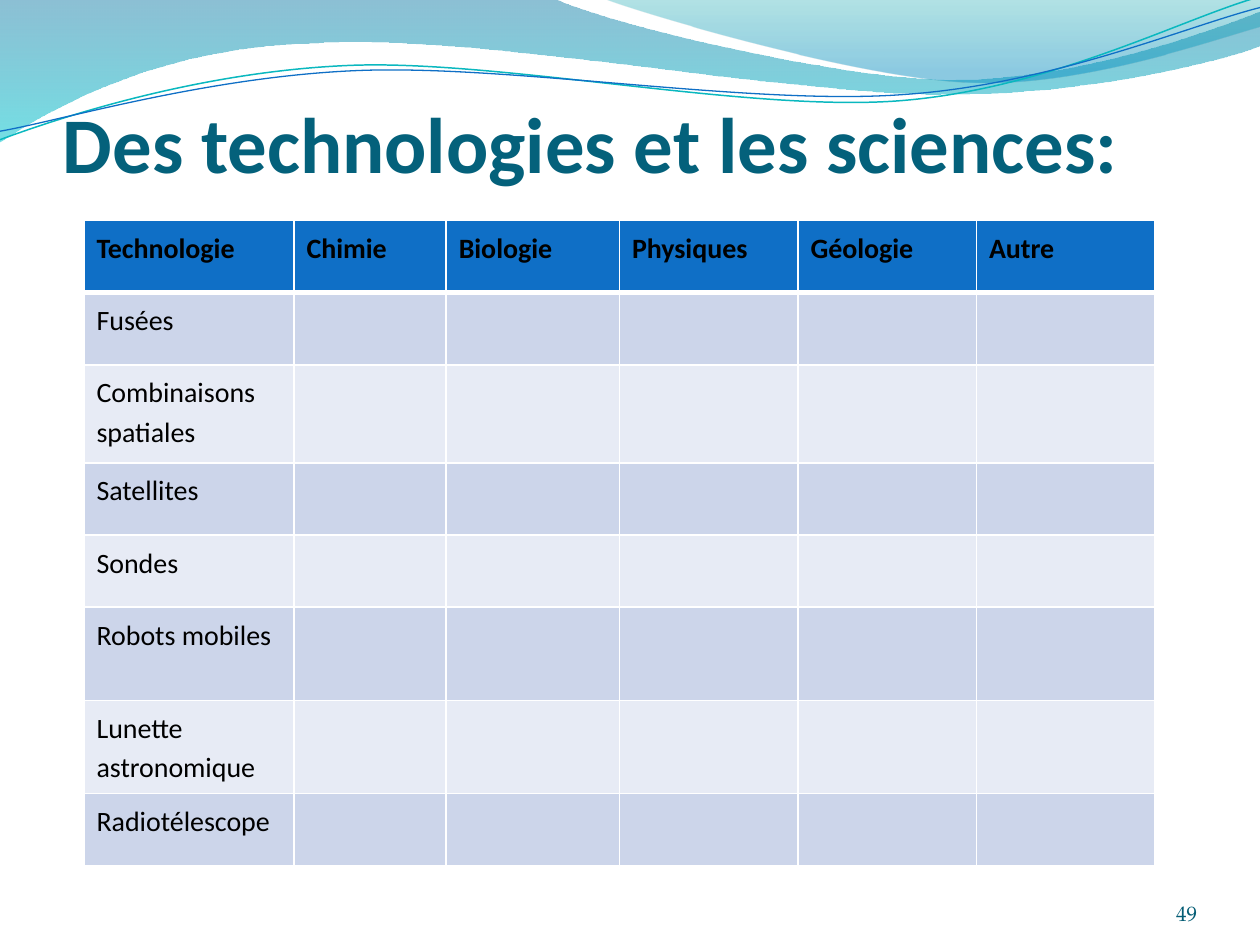
from lxml.etree import SubElement
from pptx import Presentation
from pptx.dml.color import RGBColor
from pptx.enum.text import MSO_ANCHOR, PP_ALIGN
from pptx.oxml.ns import qn
from pptx.util import Pt

WHITE = RGBColor(0xFF, 0xFF, 0xFF)
BLACK = RGBColor(0x00, 0x00, 0x00)
BLUE = RGBColor(0x0F, 0x6F, 0xC6)
TEAL = RGBColor(0x0A, 0xB8, 0xBF)
TITLE_COLOR = RGBColor(0x04, 0x61, 0x7B)
NUMBER_COLOR = RGBColor(0x04, 0x5D, 0x75)
ROW_COLORS = (RGBColor(0xE7, 0xEB, 0xF5), RGBColor(0xCC, 0xD5, 0xEA))
BAND_STOPS = ((0, RGBColor(0x00, 0x74, 0xA1), 45), (1, RGBColor(0x00, 0xC6, 0xCF), 55))
WEDGE_STOPS = ((0, RGBColor(0x00, 0xA1, 0xA9), 30), (0.8, RGBColor(0x00, 0x8B, 0xBF), 45))

BAND = ((0, 0), [
    (316.8, -0.7),
    (342.7, 12.2, 478.1, 45.4, 545.8, 45.4),
    (614.2, 45.4, 689.8, 18.7, 720, 6.5),
    (720.7, 25.9),
    (707.8, 31.7, 626.4, 54.7, 537.1, 54),
    (447.8, 54, 275, 20.2, 185, 24.5),
    (92.9, 25.9, 33.1, 59.8, -0.7, 81.4),
    (0, 0),
])
WEDGE = ((344.9, -0.7), [
    (366.5, 7.9, 491, 44.6, 553.7, 46.8),
    (616.3, 49.7, 691.9, 23, 720, 15.1),
    (720, 0),
    (344.9, -0.7),
])
TEAL_WAVE = ((-1.4, 62.9), [
    (33.8, 51.7, 114.1, 29.4, 199.8, 29.9),
    (284.9, 30.3, 425.8, 67.3, 512.4, 64.9),
    (599, 62.4, 676.5, 25.7, 720.2, 15.5),
])
BLUE_WAVE = ((-1.1, 58), [
    (32.9, 53.8, 118.3, 32.5, 204.1, 33),
    (290.6, 33.4, 428.9, 63.8, 515.5, 61.4),
    (601.3, 59.6, 678.4, 30.1, 721.4, 21.3),
])
WAVE_ROTATION = 357.3

HEADERS = ["Technologie", "Chimie", "Biologie", "Physiques", "Géologie", "Autre"]
TECHNOLOGIES = ["Fusées", "Combinaisons spatiales", "Satellites", "Sondes",
                "Robots mobiles", "Lunette astronomique", "Radiotélescope"]
COLUMN_WIDTHS = [120, 87, 99, 102, 102, 102]
ROW_HEIGHTS = [41.25, 41.25, 56, 41.25, 41.25, 53.25, 53.25, 41.25]

CELL_FONT = {"name": "Calibri", "size": Pt(16), "bold": False}
HEADER_FONT = {**CELL_FONT, "bold": True}
TITLE_FONT = {"name": "Calibri", "size": Pt(45), "bold": True}
NUMBER_FONT = {"name": "TeX Gyre Pagella", "size": Pt(12)}


def set_attributes(target, values):
    for name, value in values.items():
        setattr(target, name, value)


def bend_segments(shape, segments):
    lines = iter(list(shape._element.iter(qn("a:lnTo"))))
    for segment in segments:
        group = [next(lines) for _ in segment[::2]]
        if len(group) == 3:
            curve = SubElement(group[0].getparent(), qn("a:cubicBezTo"))
            group[0].addprevious(curve)
            for line in group:
                curve.append(line[0])
                line.getparent().remove(line)


def add_outline(slide, outline, close):
    (left, top), segments = outline
    points = [(Pt(x), Pt(y)) for segment in segments
              for x, y in zip(segment[::2], segment[1::2])]
    builder = slide.shapes.build_freeform(Pt(left), Pt(top))
    builder.add_line_segments(points, close=close)
    shape = builder.convert_to_shape()
    shape.shadow.inherit = False
    bend_segments(shape, segments)
    return shape


def add_gradient_area(slide, outline, stops):
    shape = add_outline(slide, outline, True)
    shape.line.fill.background()
    shape.fill.gradient()
    shape.fill.gradient_angle = 270
    for stop, (position, color, _) in zip(shape.fill.gradient_stops, stops):
        stop.position = position
        stop.color.rgb = color
    colors = shape._element.spPr.iter(qn("a:srgbClr"))
    for element, (_, _, opacity) in zip(colors, stops):
        SubElement(element, qn("a:alpha"), val=str(opacity * 1000))


def add_wave(slide, outline, color, width):
    shape = add_outline(slide, outline, False)
    shape.rotation = WAVE_ROTATION
    shape.fill.background()
    shape.line.color.rgb = color
    shape.line.width = Pt(width)


def write_text(paragraph, text, font, color):
    run = paragraph.add_run()
    run.text = text
    set_attributes(run.font, font)
    run.font.color.rgb = color


def add_text(slide, box, text, font, color, alignment):
    frame = slide.shapes.add_textbox(*map(Pt, box)).text_frame
    set_attributes(frame, {
        "word_wrap": True, "vertical_anchor": MSO_ANCHOR.BOTTOM,
        "margin_left": 0, "margin_right": 0, "margin_top": 0, "margin_bottom": 0,
    })
    paragraph = frame.paragraphs[0]
    paragraph.alignment = alignment
    write_text(paragraph, text, font, color)


def add_borders(cell, widths):
    properties = cell._tc.get_or_add_tcPr()
    for side, width in widths.items():
        line = SubElement(properties, qn(f"a:ln{side}"), w=str(Pt(width)))
        fill = SubElement(line, qn("a:solidFill"))
        SubElement(fill, qn("a:srgbClr"), val=str(WHITE))


def add_technology_table(slide):
    rows = [HEADERS] + [[name] + [""] * (len(HEADERS) - 1) for name in TECHNOLOGIES]
    table = slide.shapes.add_table(
        len(rows), len(HEADERS), Pt(48), Pt(126),
        Pt(sum(COLUMN_WIDTHS)), Pt(sum(ROW_HEIGHTS))).table
    for column, width in zip(table.columns, COLUMN_WIDTHS):
        column.width = Pt(width)
    for index, (row, height, texts) in enumerate(zip(table.rows, ROW_HEIGHTS, rows)):
        row.height = Pt(height)
        widths = {"L": 1, "R": 1, "T": 3 if index == 1 else 1, "B": 3 if index == 0 else 1}
        for cell, text in zip(row.cells, texts):
            add_borders(cell, widths)
            cell.fill.solid()
            cell.fill.fore_color.rgb = ROW_COLORS[index % 2] if index else BLUE
            if text:
                paragraph = cell.text_frame.paragraphs[0]
                paragraph.line_spacing = 1.15
                write_text(paragraph, text, CELL_FONT if index else HEADER_FONT, BLACK)


def main():
    presentation = Presentation()
    set_attributes(presentation, {"slide_width": Pt(720), "slide_height": Pt(540)})
    slide = presentation.slides.add_slide(presentation.slide_layouts[6])
    add_gradient_area(slide, BAND, BAND_STOPS)
    add_gradient_area(slide, WEDGE, WEDGE_STOPS)
    add_wave(slide, TEAL_WAVE, TEAL, 0.85)
    add_wave(slide, BLUE_WAVE, BLUE, 0.75)
    add_technology_table(slide)
    add_text(slide, (36, 18, 654, 90), "Des technologies et les sciences:",
             TITLE_FONT, TITLE_COLOR, PP_ALIGN.LEFT)
    add_text(slide, (624, 500, 60, 29), "49", NUMBER_FONT, NUMBER_COLOR, PP_ALIGN.RIGHT)
    presentation.save("out.pptx")


if __name__ == "__main__":
    main()
